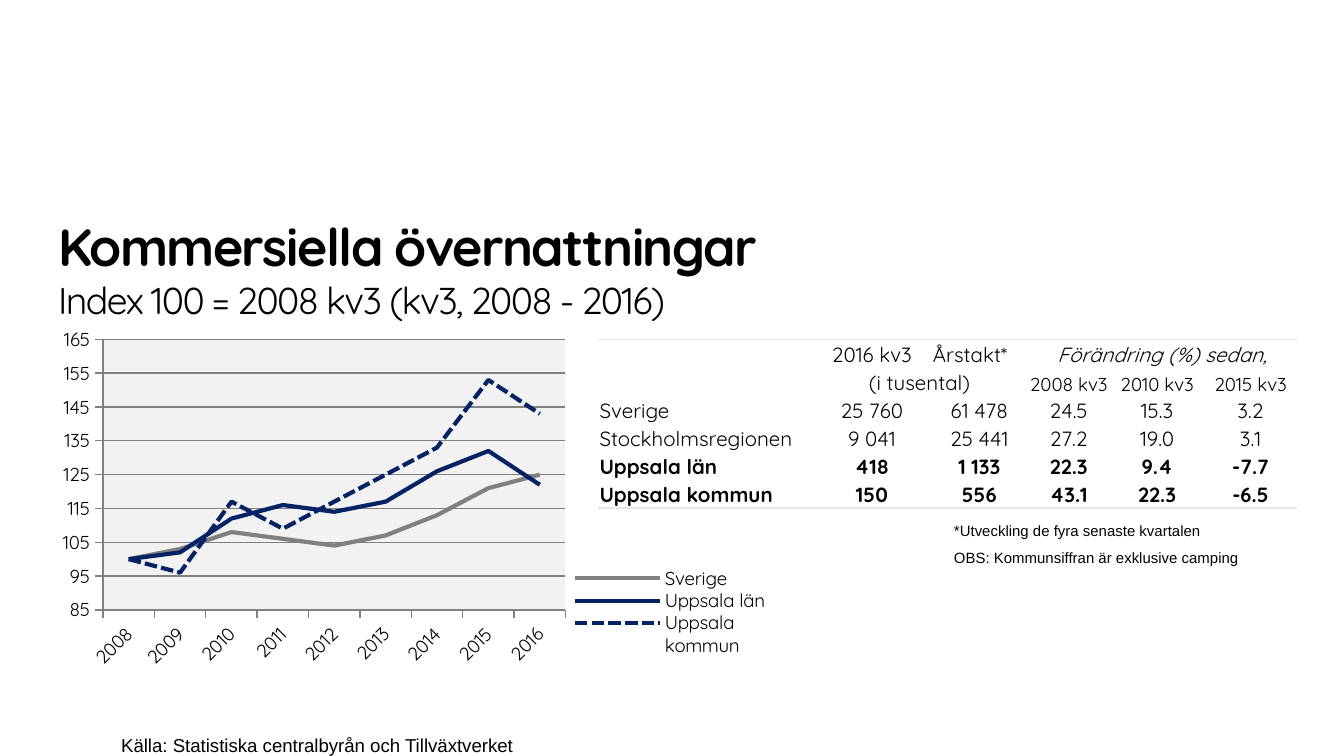
from lxml import etree
from pptx import Presentation
from pptx import util as u
from pptx.chart.data import CategoryChartData
from pptx.dml.color import RGBColor
from pptx.enum import chart as ch, dml, text
from pptx.oxml import parse_xml
from pptx.oxml.ns import nsdecls, qn

BLACK = RGBColor(0x00, 0x00, 0x00)
GREY = RGBColor(0x80, 0x80, 0x80)
NAVY = RGBColor(0x05, 0x23, 0x64)
PALE = RGBColor(0xF2, 0xF2, 0xF2)
RULE = RGBColor(0xE6, 0xE6, 0xE6)
NO_STYLE = "{2D5ABB26-0587-4C30-8999-92F81FD0307C}"

YEARS = [str(year) for year in range(2008, 2017)]
SERIES = [
    ("Sverige", [100, 103, 108, 106, 104, 107, 113, 121, 125], GREY, None),
    ("Uppsala län", [100, 102, 112, 116, 114, 117, 126, 132, 122], NAVY, None),
    ("Uppsala kommun", [100, 96, 117, 109, 117, 125, 133, 153, 143], NAVY,
     dml.MSO_LINE.SQUARE_DOT),
]
COLUMNS = [4.04, 2.26, 1.8, 1.58, 1.76, 1.77]
ROWS = [
    ["", "2016 kv3", "Årstakt*", "Förändring (%) sedan,", "", ""],
    ["", "(i tusental)", "", "2008 kv3", "2010 kv3", "2015 kv3"],
    ["Sverige", "25 760", "61 478", "24.5", "15.3", "3.2"],
    ["Stockholmsregionen", "9 041", "25 441", "27.2", "19.0", "3.1"],
    ["Uppsala län", "418", "1 133", "22.3", "9.4", "-7.7"],
    ["Uppsala kommun", "150", "556", "43.1", "22.3", "-6.5"],
]
MERGES = [((0, 3), (0, 5)), ((1, 1), (1, 2))]


class Slide:
    head_font = "Quicksand"
    note_font = "Arial"

    def __init__(self, prs):
        self.s = prs.slides.add_slide(prs.slide_layouts[6])

    def style(self, font, size, name, bold=False, italic=False):
        font.name, font.size = name, u.Pt(size)
        font.bold, font.italic = bold, italic
        font.color.rgb = BLACK

    def text_box(self, box, lines):
        sp = self.s.shapes.add_textbox(*map(u.Cm, box))
        tf = sp.text_frame
        tf.margin_left = tf.margin_right = tf.margin_top = tf.margin_bottom = 0
        tf.word_wrap = True
        tf.text = lines
        return tf

    def title(self, box, heading, subtitle):
        p = self.text_box(box, f"{heading}\v{subtitle}").paragraphs[0]
        for r, size, bold in zip(p.runs, (28, 20), (True, False)):
            self.style(r.font, size, self.head_font, bold)
            r._r.get_or_add_rPr().set("spc", "-85")

    def note(self, box, lines, size, spacing):
        for p in self.text_box(box, lines).paragraphs:
            p.alignment = text.PP_ALIGN.LEFT
            p.line_spacing = spacing
            self.style(p.runs[0].font, size, self.note_font)

    def rule(self, cell, edge):
        """Draw a thin line on one edge of a cell: lnT or lnB."""
        cell._tc.get_or_add_tcPr().insert(0, parse_xml(
            f'<a:{edge} w="12700" {nsdecls("a")}><a:solidFill>'
            f'<a:srgbClr val="{RULE}"/></a:solidFill></a:{edge}>'))

    def table(self, left, top, columns, row_height, rows, merges):
        sp = self.s.shapes.add_table(
            len(rows), len(columns), u.Cm(left), u.Cm(top),
            u.Cm(sum(columns)), u.Cm(row_height * len(rows)))
        tbl = sp.table
        tbl.first_row = tbl.horz_banding = False
        tbl._tbl.tblPr.find(qn("a:tableStyleId")).text = NO_STYLE
        for column, width in zip(tbl.columns, columns):
            column.width = u.Cm(width)
        for i, row in enumerate(rows):
            tbl.rows[i].height = u.Cm(row_height)
            for j, value in enumerate(row):
                self.cell(tbl.cell(i, j), value, i, j)
                if i == 0:
                    self.rule(tbl.cell(i, j), "lnT")
                elif i == len(rows) - 1:
                    self.rule(tbl.cell(i, j), "lnB")
        for first, last in merges:
            tbl.cell(*first).merge(tbl.cell(*last))

    def cell(self, cell, value, i, j):
        cell.fill.background()
        cell.margin_left = cell.margin_right = cell.margin_top = u.Cm(0.02)
        cell.margin_bottom = 0
        cell.vertical_anchor = text.MSO_ANCHOR.BOTTOM
        cell.text_frame.text = value
        p = cell.text_frame.paragraphs[0]
        left = j == 0 or (i, j) == (0, 2)
        p.alignment = text.PP_ALIGN.LEFT if left else text.PP_ALIGN.CENTER
        for r in p.runs:
            self.style(r.font, 10 if i == 1 and j > 2 else 11, self.head_font,
                       bold=i > 3, italic=(i, j) == (0, 3))
        p._p.get_or_add_endParaRPr().set("sz", "1100")

    def place(self, element, x, y, w, h, inner=False):
        """Set the layout of a chart part as fractions of the chart."""
        for old in element.findall(qn("c:layout")):
            element.remove(old)
        layout = etree.Element(qn("c:layout"))
        manual = etree.SubElement(layout, qn("c:manualLayout"))
        parts = [("layoutTarget", "inner")] if inner else []
        parts += [("xMode", "edge"), ("yMode", "edge"),
                  ("x", x), ("y", y), ("w", w), ("h", h)]
        for tag, value in parts:
            etree.SubElement(manual, qn(f"c:{tag}")).set("val", str(value))
        position = element.find(qn("c:legendPos"))
        if position is None:
            element.insert(0, layout)
        else:
            position.addnext(layout)

    def line_chart(self, box, categories, series):
        data = CategoryChartData(number_format="0")
        data.categories = categories
        for name, values, _, _ in series:
            data.add_series(name, values)
        chart = self.s.shapes.add_chart(
            ch.XL_CHART_TYPE.LINE, *map(u.Cm, box), data).chart
        self.style(chart.font, 10, self.head_font)
        chart.has_title = False
        chart.plots[0].vary_by_categories = False
        for line, (_, _, color, dash) in zip(chart.plots[0].series, series):
            line.smooth = False
            line.marker.style = ch.XL_MARKER_STYLE.NONE
            line.format.line.color.rgb = color
            line.format.line.width = u.Pt(2.25)
            if dash:
                line.format.line.dash_style = dash

        values, years = chart.value_axis, chart.category_axis
        values.minimum_scale, values.maximum_scale = 85, 165
        values.major_unit = 10
        values.has_major_gridlines = True
        values.tick_labels.number_format = "0"
        values.tick_labels.number_format_is_linked = False
        for line in (values.format.line, years.format.line,
                     values.major_gridlines.format.line):
            line.color.rgb = GREY
            line.width = u.Pt(0.75)
        for axis in (values, years):
            axis.major_tick_mark = ch.XL_TICK_MARK.OUTSIDE
            self.style(axis.tick_labels.font, 10, self.head_font)
        years._element.find(qn("c:txPr")).find(qn("a:bodyPr")).set("rot", "-2700000")

        chart.has_legend = True
        chart.legend.position = ch.XL_LEGEND_POSITION.RIGHT
        chart.legend.include_in_layout = False
        self.style(chart.legend.font, 10, self.head_font)
        self.place(chart.legend._element, 0.69, 0.69, 0.28, 0.25)
        area = chart._chartSpace.chart.plotArea
        self.place(area, 0.07, 0.05, 0.62, 0.76, inner=True)
        area.append(parse_xml(
            f'<c:spPr {nsdecls("c", "a")}><a:solidFill>'
            f'<a:srgbClr val="{PALE}"/></a:solidFill></c:spPr>'))


def main():
    prs = Presentation()
    prs.slide_width, prs.slide_height = u.Cm(25.4), u.Cm(14.29)
    s = Slide(prs)
    s.title((1.1, 4.05, 20.68, 2.03), "Kommersiella övernattningar",
            "Index 100 = 2008 kv3 (kv3, 2008 - 2016)")
    s.note((2.29, 13.45, 8, 0.85),
           "Källa: Statistiska centralbyrån och Tillväxtverket", 10, u.Pt(24))
    s.table(11.31, 6.42, COLUMNS, 0.53, ROWS, MERGES)
    s.note((18.03, 9.69, 6, 2.54),
           "*Utveckling de fyra senaste kvartalen\n"
           "OBS: Kommunsiffran är exklusive camping", 8, 1.5)
    s.line_chart((0.96, 6.08, 14.1, 6.73), YEARS, SERIES)
    prs.save("out.pptx")


if __name__ == "__main__":
    main()
